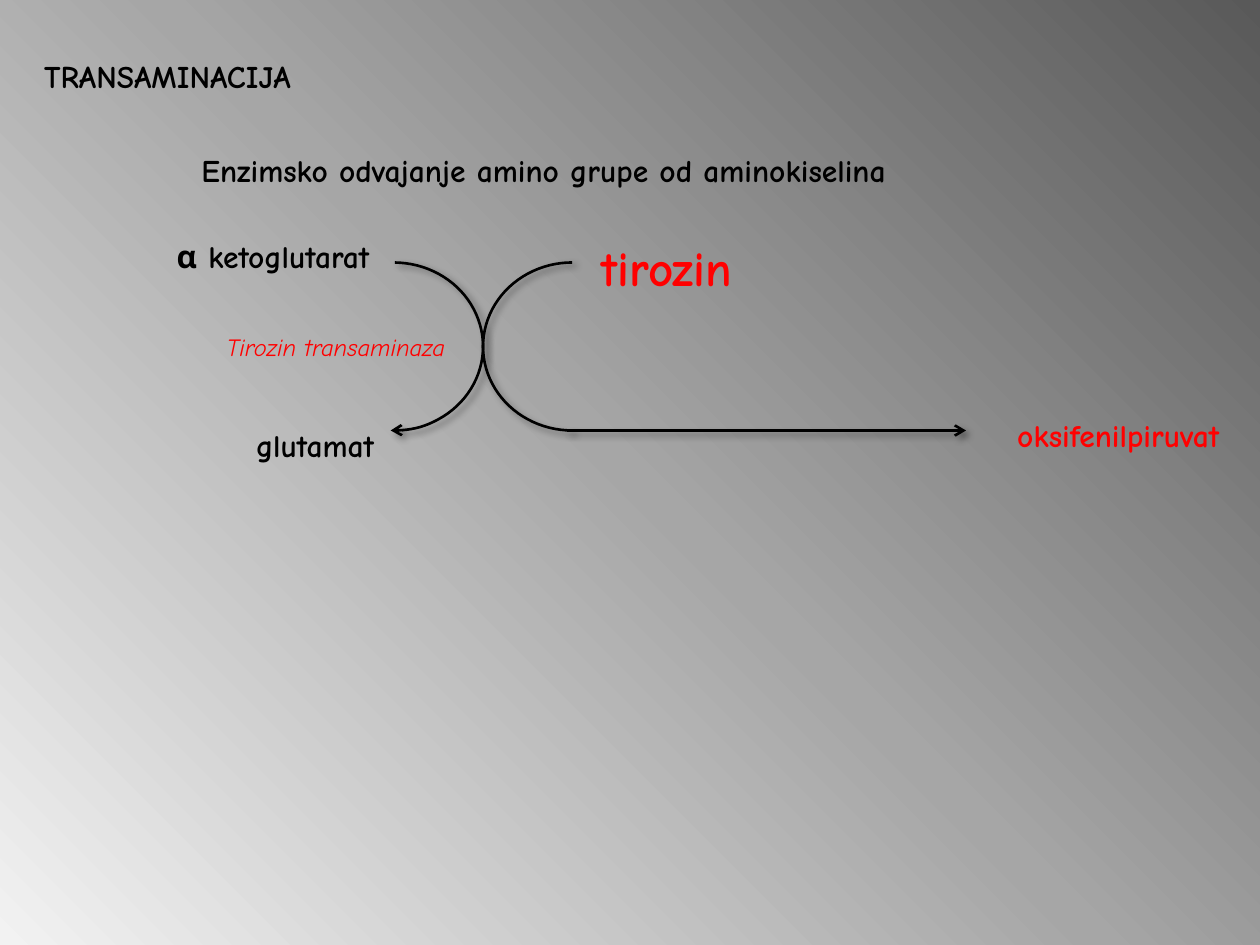
from copy import deepcopy

from lxml.etree import SubElement
from pptx import Presentation
from pptx.dml.color import RGBColor
from pptx.enum.shapes import MSO_CONNECTOR, MSO_SHAPE
from pptx.enum.text import MSO_ANCHOR, MSO_AUTO_SIZE, PP_ALIGN
from pptx.oxml import parse_xml
from pptx.oxml.ns import nsdecls, qn
from pptx.util import Inches, Pt

BLACK = RGBColor(0x00, 0x00, 0x00)
RED = RGBColor(0xFF, 0x00, 0x00)
BACKDROP = [
    (0, RGBColor(0x59, 0x59, 0x59)),
    (0.5, RGBColor(0xA6, 0xA6, 0xA6)),
    (1, RGBColor(0xF2, 0xF2, 0xF2)),
]
FONT = "Comic Neue"
CELL = Inches(1) / 12  # the slide is 120 columns by 90 rows


def cells(*counts):
    return [round(count * CELL) for count in counts]


def paint_backdrop(slide):
    fill = slide.background.fill
    fill.gradient()
    fill.gradient_angle = 225
    first_stop = fill.gradient_stops[0]._gs
    first_stop.addnext(deepcopy(first_stop))
    for stop, (position, color) in zip(fill.gradient_stops, BACKDROP):
        stop.position = position
        stop.color.rgb = color


def write(frame, text, size=18, color=BLACK, bold=True, italic=False):
    frame.auto_size = MSO_AUTO_SIZE.SHAPE_TO_FIT_TEXT
    frame.vertical_anchor = MSO_ANCHOR.TOP
    paragraph = frame.paragraphs[0]
    run = paragraph.add_run()
    run.text = text
    font = run.font
    font.name, font.size, font.color.rgb = FONT, Pt(size), color
    font.bold, font.italic = bold, italic
    return paragraph


def heading(shape, box, text):
    """Unwrapped, left-aligned line with a hanging indent."""
    shape.left, shape.top, shape.width, shape.height = cells(*box)
    shape.text_frame.word_wrap = False
    paragraph = write(shape.text_frame, text)
    paragraph.alignment = PP_ALIGN.LEFT
    paragraph.line_spacing = 1.5
    properties = paragraph._p.get_or_add_pPr()
    properties.set("marL", str(Inches(0.38)))
    properties.set("indent", str(-Inches(0.38)))


def label(slide, box, text, **style):
    frame = slide.shapes.add_textbox(*cells(*box)).text_frame
    frame.word_wrap = True
    write(frame, text, **style).alignment = PP_ALIGN.CENTER


def stroke(shape, arrow=False):
    """Black line with a soft shadow and, if asked, an arrowhead at its end."""
    shape.line.color.rgb = BLACK
    shape.line.width = Pt(1.5)
    if arrow:
        SubElement(shape.line._get_or_add_ln(), qn("a:tailEnd"), type="arrow")
    shape._element.spPr.append(parse_xml(
        f'<a:effectLst {nsdecls("a")}><a:outerShdw blurRad="{Pt(4)}" dist="{Pt(3)}" '
        'dir="2700000" rotWithShape="0"><a:srgbClr val="000000">'
        '<a:alpha val="40000"/></a:srgbClr></a:outerShdw></a:effectLst>'))


def half_turn(slide, box, angles, arrow=False):
    arc = slide.shapes.add_shape(MSO_SHAPE.ARC, *cells(*box))
    arc.rotation = 180
    for index, degrees in enumerate(angles):
        arc.adjustments[index] = degrees * 0.6  # 60000ths of a degree, in 100000s
    arc.fill.background()
    stroke(arc, arrow)


def transamination(slide, left, top):
    """Two coupled reactions that touch between the two half turns."""
    arc_width, arc_height = 17, 16
    arc_left, arc_top = left + 15, top + 3
    touch, arc_bottom = arc_left + arc_width, arc_top + arc_height

    # Substrates and products
    label(slide, (left + 38, top, 23, 6.84), "tirozin", size=28, color=RED)
    label(slide, (left, top, 24, 4.8), "α ketoglutarat")
    label(slide, (left + 8, top + 18, 16, 4.8), "glutamat")
    label(slide, (left + 79, top + 17, 27, 4.8), "oksifenilpiruvat", color=RED)

    # Reaction paths
    half_turn(slide, (arc_left, arc_top, arc_width, arc_height),
              (90.76, 272.12), arrow=True)
    half_turn(slide, (touch, arc_top, arc_width, arc_height), (270.31, 89.92))

    # Enzyme
    label(slide, (left + 3, top + 9, 30, 4.1), "Tirozin transaminaza",
          size=14, color=RED, bold=False, italic=True)

    # Arrow to the product
    product_arrow = slide.shapes.add_connector(
        MSO_CONNECTOR.STRAIGHT,
        *cells(touch + 8, arc_bottom, touch + 46, arc_bottom))
    stroke(product_arrow, arrow=True)


def main():
    deck = Presentation()
    deck.slide_width, deck.slide_height = cells(120, 90)
    slide = deck.slides.add_slide(deck.slide_layouts.get_by_name("Title Only"))
    paint_backdrop(slide)
    heading(slide.shapes.title, (3, 3, 32.2, 6.1), "TRANSAMINACIJA")
    subtitle_box = (18, 12, 74, 6.7)
    heading(slide.shapes.add_textbox(*cells(*subtitle_box)), subtitle_box,
            "Enzimsko odvajanje amino grupe od aminokiselina")
    transamination(slide, 14, 22)
    deck.save("out.pptx")


if __name__ == "__main__":
    main()
